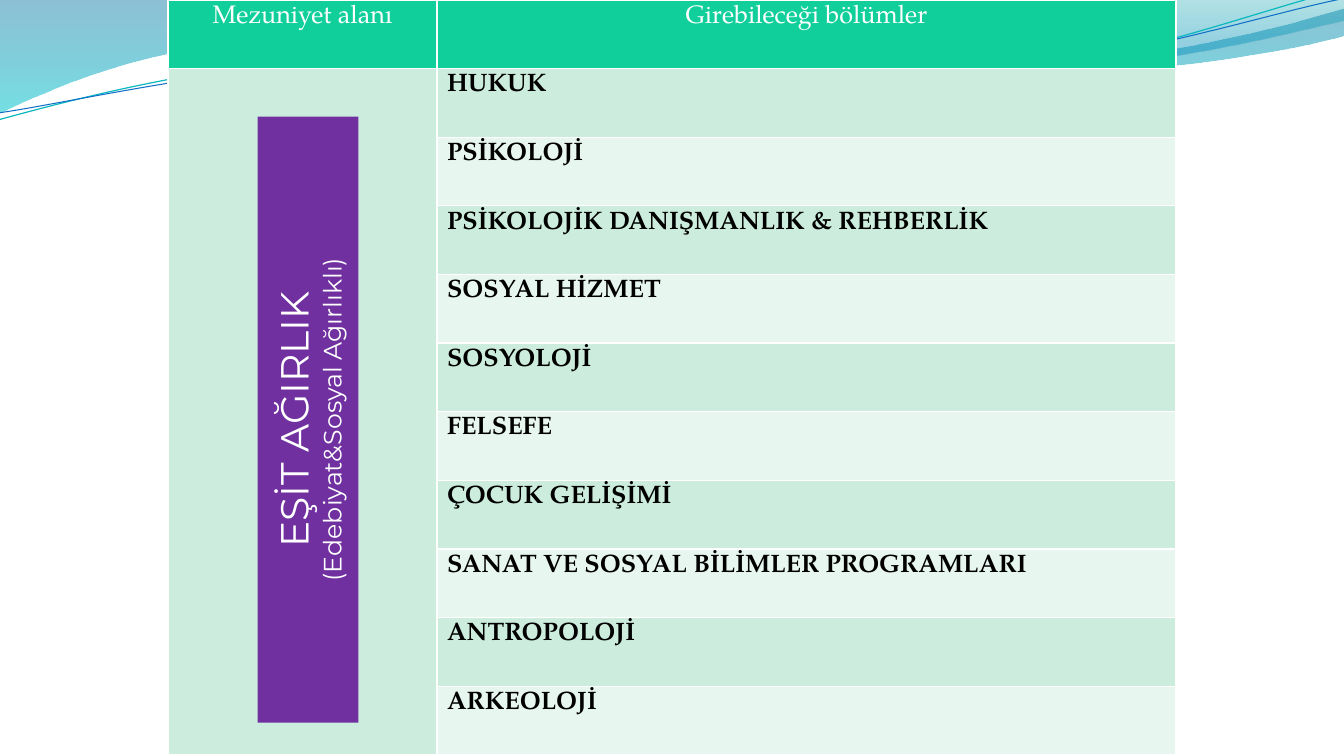
import pptx
import pptx.util
import pptx.dml.color
import pptx.enum.shapes
import pptx.enum.text
import pptx.oxml
import pptx.oxml.ns
from dataclasses import dataclass

HEADERS = ["Mezuniyet alanı", "Girebileceği bölümler"]
DEPARTMENTS = [
    "HUKUK",
    "PSİKOLOJİ",
    "PSİKOLOJİK DANIŞMANLIK & REHBERLİK",
    "SOSYAL HİZMET",
    "SOSYOLOJİ",
    "FELSEFE",
    "ÇOCUK GELİŞİMİ",
    "SANAT VE SOSYAL BİLİMLER PROGRAMLARI",
    "ANTROPOLOJİ",
    "ARKEOLOJİ",
]
FIELD = ["EŞİT AĞIRLIK", "(Edebiyat&Sosyal Ağırlıklı)"]

TABLE = (168, 0, 1008, 755)
COLUMNS = [269, 739]
FIELD_BOX = (5, 369, 606, 101)
STRAND_ROTATION = 357.3

BANDS = [
    {
        "segments": [
            [(0, 0)],
            [(592, -1)],
            [(639, 17), (892, 64), (1019, 64)],
            [(1147, 64), (1288, 26), (1344, 9)],
            [(1346, 36)],
            [(1321, 44), (1169, 77), (1002, 76)],
            [(836, 76), (513, 28), (346, 34)],
            [(173, 36), (61, 84), (-1, 114)],
            [(0, 0)],
        ],
        "stops": [(0, "0074A1", 45), (1, "00C6CF", 55)],
    },
    {
        "segments": [
            [(644, -1)],
            [(684, 11), (916, 62), (1033, 66)],
            [(1150, 70), (1292, 32), (1344, 21)],
            [(1344, 0)],
            [(644, -1)],
        ],
        "stops": [(0, "00A1A9", 30), (0.8, "008BBF", 45)],
    },
]
STRANDS = [
    {
        "segments": [
            [(-3, 88)],
            [(64, 73), (213, 40), (372, 41)],
            [(532, 41), (794, 94), (957, 91)],
            [(1118, 88), (1264, 36), (1344, 22)],
        ],
        "color": "0AB8BF",
        "width": 0.85,
    },
    {
        "segments": [
            [(-2, 81)],
            [(63, 75), (220, 46), (381, 45)],
            [(541, 47), (801, 89), (962, 87)],
            [(1123, 83), (1266, 42), (1347, 30)],
        ],
        "color": "0F6FC6",
        "width": 0.75,
    },
]


@dataclass(frozen=True)
class Theme:
    header: str = "10CF9B"
    stripes: tuple = ("CCEDDE", "E7F6EF")
    field: str = "7030A0"
    light: str = "FFFFFF"
    dark: str = "000000"
    body_font: str = "TeX Gyre Pagella"
    field_font: str = "Montserrat"
    body_size: int = 18
    field_size: int = 28
    border: int = 1


THEME = Theme()
SCALE = 914400 / 100.8


def px(n):
    return pptx.util.Emu(round(n * SCALE))


def rgb(value):
    return pptx.dml.color.RGBColor.from_string(value)


def add_curve(slide, segments, close):
    points = [(px(x), px(y)) for seg in segments for x, y in seg]
    builder = slide.shapes.build_freeform(*points[0], scale=1.0)
    builder.add_line_segments(points[1:], close=close)
    sp = builder.convert_to_shape()
    sp.shadow.inherit = False
    lines = iter(list(sp._element.spPr.iter(pptx.oxml.ns.qn("a:lnTo"))))
    for seg in segments[1:]:
        parts = [next(lines) for point in seg]
        if len(parts) == 3:
            bezier = pptx.oxml.parse_xml(
                f'<a:cubicBezTo {pptx.oxml.ns.nsdecls("a")}/>')
            parts[0].addprevious(bezier)
            for line in parts:
                bezier.append(line[0])
                line.getparent().remove(line)
    return sp


def add_band(slide, band):
    sp = add_curve(slide, band["segments"], True)
    sp.line.fill.background()
    sp.fill.gradient()
    sp.fill.gradient_angle = 270
    for stop, (position, color, opacity) in zip(sp.fill.gradient_stops, band["stops"]):
        stop.position = position
        stop.color.rgb = rgb(color)
    colors = sp._element.spPr.iter(pptx.oxml.ns.qn("a:srgbClr"))
    for clr, (position, color, opacity) in zip(colors, band["stops"]):
        clr.append(pptx.oxml.parse_xml(
            f'<a:alpha {pptx.oxml.ns.nsdecls("a")} val="{opacity * 1000}"/>'))


def add_strand(slide, strand):
    sp = add_curve(slide, strand["segments"], False)
    sp.rotation = STRAND_ROTATION
    sp.fill.background()
    sp.line.color.rgb = rgb(strand["color"])
    sp.line.width = pptx.util.Pt(strand["width"])


def format_text(p, size, font, color, bold=False, centered=False):
    if centered:
        p.alignment = pptx.enum.text.PP_ALIGN.CENTER
    for r in p.runs:
        r.font.size = pptx.util.Pt(size)
        r.font.name = font
        r.font.bold = bold
        r.font.color.rgb = rgb(color)


def style_cell(cell, fill):
    tcPr = cell._tc.get_or_add_tcPr()
    for side in "LRTB":
        tcPr.append(pptx.oxml.parse_xml(
            f'<a:ln{side} {pptx.oxml.ns.nsdecls("a")} w="{pptx.util.Pt(THEME.border)}">'
            f'<a:solidFill><a:srgbClr val="{THEME.light}"/></a:solidFill></a:ln{side}>'))
    cell.fill.solid()
    cell.fill.fore_color.rgb = rgb(fill)


def add_departments(slide):
    rows = len(DEPARTMENTS) + 1
    table = slide.shapes.add_table(rows, len(COLUMNS), *map(px, TABLE)).table
    for column, width in zip(table.columns, COLUMNS):
        column.width = px(width)
    for row in table.rows:
        row.height = px(TABLE[3] / rows)
    for c, text in enumerate(HEADERS):
        cell = table.cell(0, c)
        cell.text_frame.text = text
        format_text(cell.text_frame.paragraphs[0], THEME.body_size, THEME.body_font,
                    THEME.light, centered=True)
        style_cell(cell, THEME.header)
    for i, text in enumerate(DEPARTMENTS):
        cell = table.cell(i + 1, 1)
        cell.text_frame.text = text
        format_text(cell.text_frame.paragraphs[0], THEME.body_size, THEME.body_font,
                    THEME.dark, bold=True)
        style_cell(cell, THEME.stripes[i % 2])
        style_cell(table.cell(i + 1, 0), THEME.stripes[0])
    table.cell(1, 0).merge(table.cell(rows - 1, 0))


def add_field(slide):
    sp = slide.shapes.add_shape(pptx.enum.shapes.MSO_SHAPE.RECTANGLE, *map(px, FIELD_BOX))
    sp.rotation = 270
    sp.shadow.inherit = False
    sp.fill.solid()
    sp.fill.fore_color.rgb = rgb(THEME.field)
    sp.line.fill.background()
    tf = sp.text_frame
    tf.word_wrap = True
    tf.vertical_anchor = pptx.enum.text.MSO_ANCHOR.MIDDLE
    tf.text = "\n".join(FIELD)
    for p, size in zip(tf.paragraphs, (THEME.field_size, THEME.body_size)):
        format_text(p, size, THEME.field_font, THEME.light, centered=True)


def main():
    prs = pptx.Presentation()
    prs.slide_width, prs.slide_height = px(1344), px(756)
    slide = prs.slides.add_slide(prs.slide_layouts[6])
    for band in BANDS:
        add_band(slide, band)
    for strand in STRANDS:
        add_strand(slide, strand)
    add_departments(slide)
    add_field(slide)
    prs.save("out.pptx")


if __name__ == "__main__":
    main()
